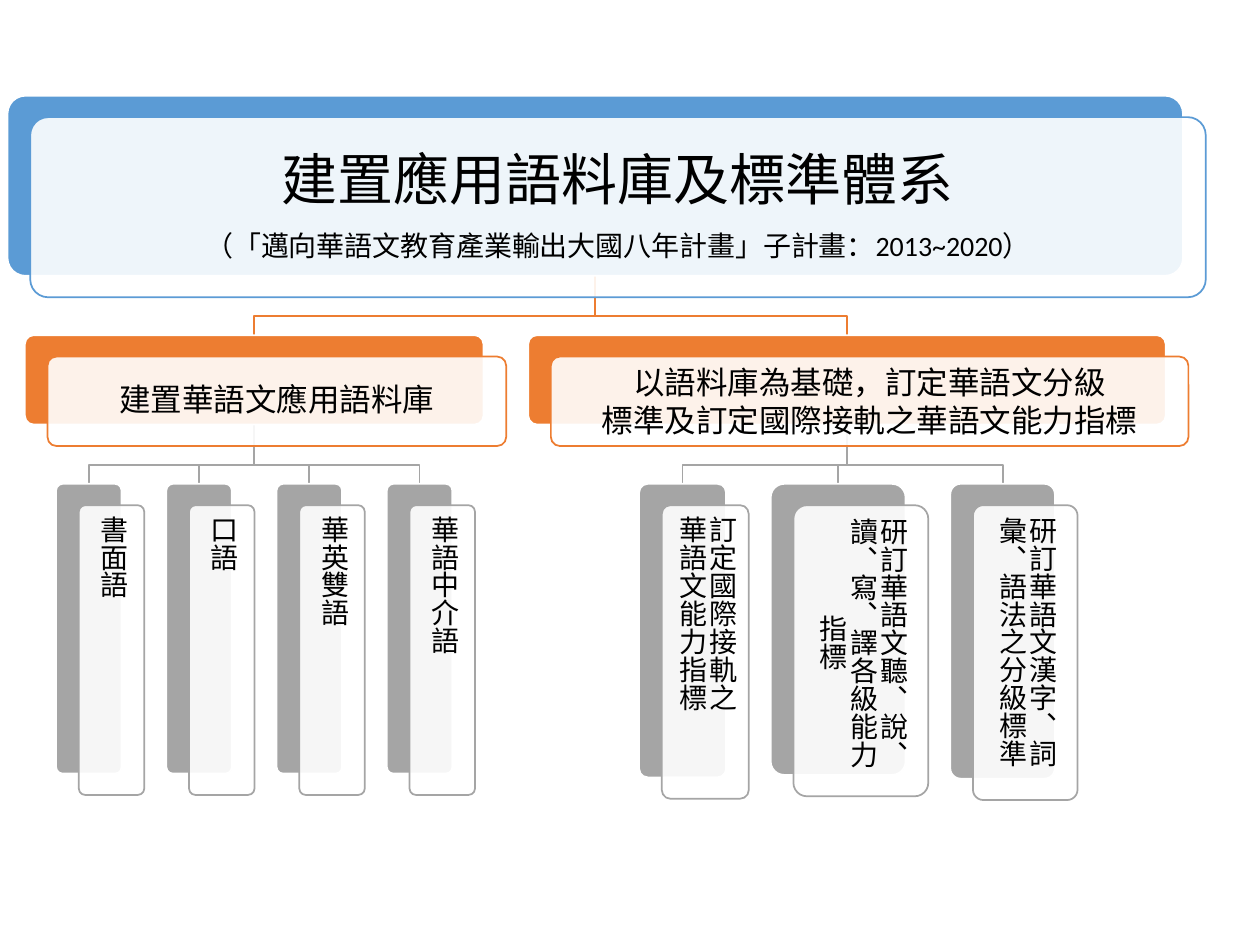
from dataclasses import dataclass

from lxml.etree import SubElement
from pptx import Presentation
from pptx.dml.color import RGBColor
from pptx.enum.shapes import MSO_SHAPE
from pptx.enum.text import MSO_ANCHOR, PP_ALIGN
from pptx.oxml.ns import qn
from pptx.util import Inches, Pt


@dataclass(frozen=True)
class Theme:
    font: str = "Calibri"
    text: str = "000000"
    paper: str = "FFFFFF"
    levels: tuple = ("5B9BD5", "ED7D31", "A5A5A5")
    title_size: int = 32
    branch_size: int = 18
    body_size: int = 16
    line_width: int = 1
    opacity: int = 90


@dataclass(frozen=True)
class Box:
    left: float
    top: float
    width: float
    height: float

    @property
    def center(self):
        return self.left + self.width / 2

    @property
    def bottom(self):
        return self.top + self.height


@dataclass(frozen=True)
class Node:
    lines: tuple
    width: float
    height: float
    sizes: tuple
    children: tuple = ()
    vertical: bool = False
    line_spacing: float = 0.9
    space_share: float = 0.35


THEME = Theme()
COLUMNS, ROWS = 100, 75
SLIDE_WIDTH, SLIDE_HEIGHT = Inches(10), Inches(7.5)
SIBLING_GAP, LEVEL_GAP, ELBOW_RISE = 3.55, 4.7, 1.5
FRONT_SHIFT_X, FRONT_SHIFT_Y = 1.8, 1.7
CORNER = 0.1


def column(value):
    return round(SLIDE_WIDTH * value / COLUMNS)


def row(value):
    return round(SLIDE_HEIGHT * value / ROWS)


def leaf(*lines, width=5.2, height=23, space_share=0.35):
    return Node(lines, width, height, (THEME.body_size,), vertical=True,
                space_share=space_share)


def style_shape(shape, line_color, fill_color=None):
    shape.shadow.inherit = False
    shape.line.color.rgb = RGBColor.from_string(line_color)
    shape.line.width = Pt(THEME.line_width)
    if fill_color:
        shape.fill.solid()
        shape.fill.fore_color.rgb = RGBColor.from_string(fill_color)
    else:
        shape.fill.background()


def add_card(slide, box, line_color, fill_color):
    shape = slide.shapes.add_shape(
        MSO_SHAPE.ROUNDED_RECTANGLE, column(box.left), row(box.top),
        column(box.width), row(box.height))
    shape.adjustments[0] = CORNER
    style_shape(shape, line_color, fill_color)
    return shape


def write_text(shape, node):
    frame = shape.text_frame
    frame.word_wrap = True
    frame.vertical_anchor = MSO_ANCHOR.MIDDLE
    inset = Inches(node.sizes[0] / 240)
    frame.margin_left = frame.margin_right = inset
    frame.margin_top = frame.margin_bottom = inset
    if node.vertical:
        shape.text_frame._txBody.bodyPr.set("vert", "eaVert")
    frame.text = "\n".join(node.lines)
    for index, paragraph in enumerate(frame.paragraphs):
        size = node.sizes[min(index, len(node.sizes) - 1)]
        paragraph.alignment = PP_ALIGN.CENTER
        paragraph.line_spacing = node.line_spacing
        paragraph.space_after = Pt(size * node.space_share)
        for run in paragraph.runs:
            run.font.name = THEME.font
            run.font.size = Pt(size)
            run.font.color.rgb = RGBColor.from_string(THEME.text)


def draw_node(slide, node, box, color):
    add_card(slide, box, THEME.paper, color)
    front_box = Box(box.left + FRONT_SHIFT_X, box.top + FRONT_SHIFT_Y,
                    box.width, box.height)
    front = add_card(slide, front_box, color, THEME.paper)
    fill_color = front._element.spPr.find(qn("a:solidFill"))[0]
    SubElement(fill_color, qn("a:alpha")).set("val", str(THEME.opacity * 1000))
    write_text(front, node)


def draw_elbow(slide, parent_box, child_box, color):
    elbow = child_box.top - ELBOW_RISE
    builder = slide.shapes.build_freeform(
        column(parent_box.center), row(parent_box.bottom))
    builder.add_line_segments(
        [(column(x), row(y)) for x, y in (
            (parent_box.center, elbow), (child_box.center, elbow),
            (child_box.center, child_box.top))], close=False)
    style_shape(builder.convert_to_shape(), color)


def place_children(node, box):
    total = sum(child.width for child in node.children)
    total += SIBLING_GAP * (len(node.children) - 1)
    left = box.center - total / 2
    boxes = []
    for child in node.children:
        boxes.append(Box(left, box.bottom + LEVEL_GAP, child.width, child.height))
        left += child.width + SIBLING_GAP
    return boxes


def draw_tree(slide, node, box, level=0):
    child_boxes = place_children(node, box)
    for child_box in child_boxes:
        draw_elbow(slide, box, child_box, THEME.levels[level + 1])
    draw_node(slide, node, box, THEME.levels[level])
    for child, child_box in zip(node.children, child_boxes):
        draw_tree(slide, child, child_box, level + 1)


CORPUS = Node(
    ("建置華語文應用語料庫",), 36.4, 7.1, (THEME.branch_size,),
    (leaf("書面語"), leaf("口語"), leaf("華英雙語"), leaf("華語中介語")))

STANDARDS = Node(
    ("以語料庫為基礎，訂定華語文分級", "標準及訂定國際接軌之華語文能力指標"),
    50.6, 7.1, (THEME.branch_size,),
    (leaf("訂定國際接軌之", "華語文能力指標", width=6.9, height=23.3, space_share=0),
     leaf("研訂華語文聽、說、讀、寫、譯各級能力指標", width=10.7, height=23.1),
     leaf("研訂華語文漢字、詞彙、語法之分級標準", width=8.3, height=23.4)),
    line_spacing=1.0, space_share=0)

PLAN = Node(
    ("建置應用語料庫及標準體系",
     "（「邁向華語文教育產業輸出大國八年計畫」子計畫：2013~2020）"),
    93.3, 14.3, (THEME.title_size, THEME.body_size), (CORPUS, STANDARDS))


def main():
    presentation = Presentation()
    presentation.slide_width = SLIDE_WIDTH
    presentation.slide_height = SLIDE_HEIGHT
    slide = presentation.slides.add_slide(presentation.slide_layouts[6])
    draw_tree(slide, PLAN, Box(0.6, 7.6, PLAN.width, PLAN.height))
    presentation.save("out.pptx")


if __name__ == "__main__":
    main()
